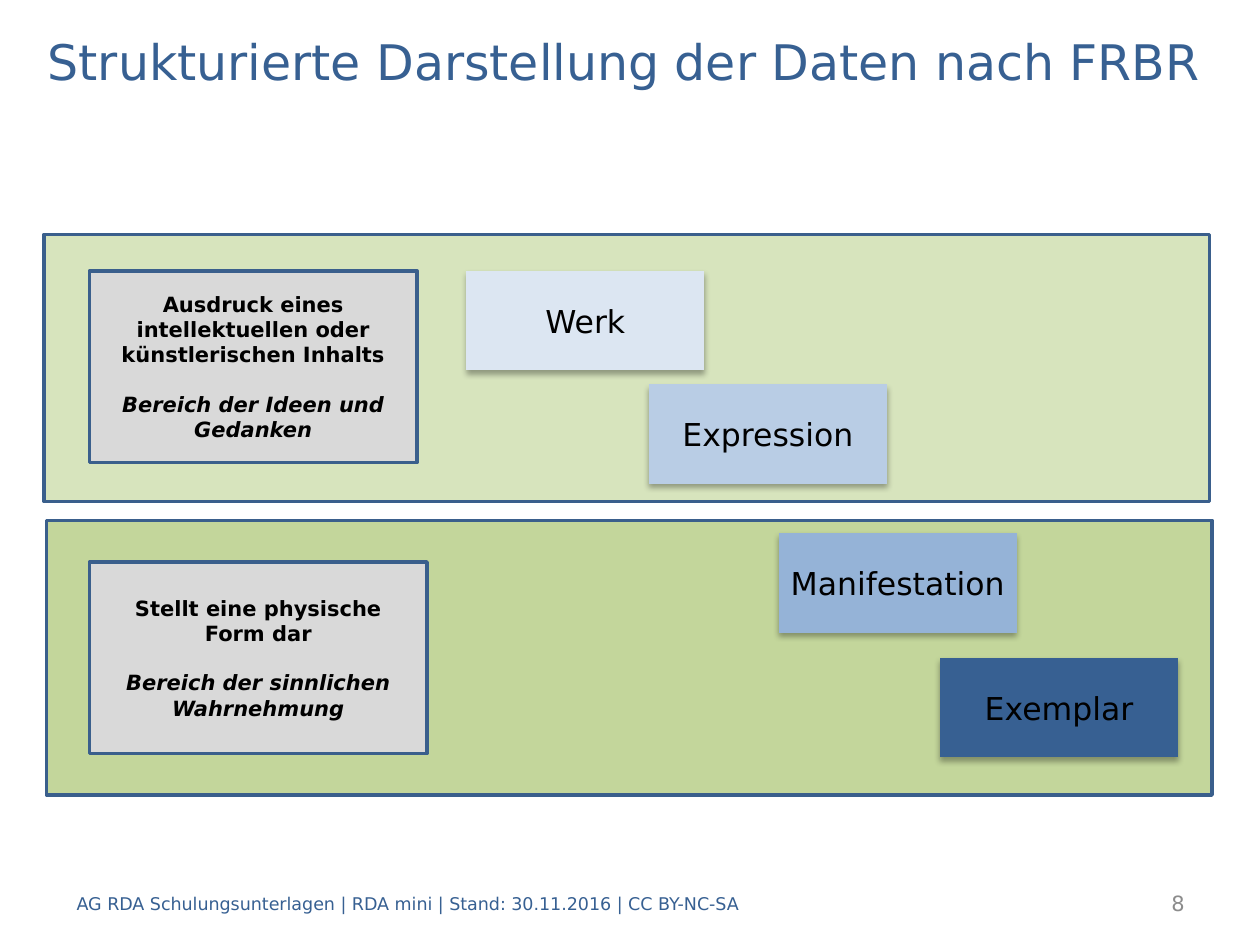
from dataclasses import dataclass

from lxml import etree
from pptx import Presentation
from pptx import util as u
from pptx.dml.color import RGBColor
from pptx.enum import shapes, text
from pptx.oxml.ns import qn


@dataclass(frozen=True)
class Theme:
    font: str = "DejaVu Sans"
    blue: str = "376092"
    border: str = "3A5F8C"
    grey: str = "D9D9D9"
    number: str = "8C8C8C"
    ink: str = "000000"
    idea_band: str = "D7E4BD"
    physical_band: str = "C3D69B"
    levels: tuple = ("DCE6F2", "B9CDE5", "95B3D7", "376092")
    title: int = 28
    level: int = 18
    body: int = 12
    footer: int = 10


T = Theme()
MSO = shapes.MSO_SHAPE
ALIGN = text.PP_ALIGN


def add_box(s, kind, at, fill, border=None):
    sp = s.shapes.add_shape(kind, *(u.Inches(v) for v in at))
    sp.shadow.inherit = False
    sp.fill.solid()
    sp.fill.fore_color.rgb = RGBColor.from_string(fill)
    if border:
        sp.line.color.rgb = RGBColor.from_string(border)
        sp.line.width = u.Pt(2)
    else:
        sp.line.fill.background()
    return sp


def write(p, words, size, color, align, bold=False, italic=False):
    p.alignment = align
    r = p.add_run()
    r.text = words
    r.font.name = T.font
    r.font.size = u.Pt(size)
    r.font.color.rgb = RGBColor.from_string(color)
    r.font.bold = bold
    r.font.italic = italic


prs = Presentation()
prs.slide_width, prs.slide_height = u.Inches(10), u.Inches(7.5)
s = prs.slides.add_slide(prs.slide_layouts[6])

add_box(s, MSO.RECTANGLE, (0.37, 4.13, 9.25, 2.18), T.physical_band, T.border)
add_box(s, MSO.RECTANGLE, (0.35, 1.86, 9.25, 2.12), T.idea_band, T.border)

notes = [
    (2.15, 2.6, "Ausdruck eines intellektuellen oder künstlerischen Inhalts",
     "Bereich der Ideen und Gedanken"),
    (4.46, 2.68, "Stellt eine physische Form dar",
     "Bereich der sinnlichen Wahrnehmung"),
]
for top, width, meaning, realm in notes:
    sp = add_box(s, MSO.RECTANGLE, (0.71, top, width, 1.52), T.grey, T.border)
    tf = sp.text_frame
    tf.word_wrap = True
    tf.vertical_anchor = text.MSO_ANCHOR.MIDDLE
    write(tf.paragraphs[0], meaning, T.body, T.ink, ALIGN.CENTER, bold=True)
    p = tf.add_paragraph()
    p.space_before = u.Pt(14)
    write(p, realm, T.body, T.ink, ALIGN.CENTER, bold=True, italic=True)

levels = [
    ("Werk", 3.7, 2.15),
    ("Expression", 5.15, 3.05),
    ("Manifestation", 6.18, 4.23),
    ("Exemplar", 7.46, 5.22),
]
for (name, left, top), fill in zip(levels, T.levels):
    sp = add_box(s, MSO.FLOWCHART_PROCESS, (left, top, 1.89, 0.79), fill)
    effects = sp._element.spPr.find(qn("a:effectLst"))
    shadow = etree.SubElement(effects, qn("a:outerShdw"), blurRad=str(u.Pt(3.5)),
                              dist=str(u.Pt(2.2)), dir="5400000", rotWithShape="0")
    color = etree.SubElement(shadow, qn("a:srgbClr"), val=T.ink)
    etree.SubElement(color, qn("a:alpha"), val="32000")
    tf = sp.text_frame
    tf.word_wrap = False
    tf.vertical_anchor = text.MSO_ANCHOR.MIDDLE
    write(tf.paragraphs[0], name, T.level, T.ink, ALIGN.CENTER)

labels = [
    ((0.28, 0.2, 9.45, 0.56), "Strukturierte Darstellung der Daten nach FRBR",
     T.title, T.blue, ALIGN.LEFT),
    ((7.91, 6.97, 1.59, 0.4), "8", T.body, T.number, ALIGN.RIGHT),
    ((0.51, 6.97, 8.5, 0.4),
     "AG RDA Schulungsunterlagen | RDA mini | Stand: 30.11.2016 | CC BY-NC-SA",
     T.footer, T.blue, ALIGN.LEFT),
]
for at, words, size, color, align in labels:
    tf = s.shapes.add_textbox(*(u.Inches(v) for v in at)).text_frame
    tf.word_wrap = True
    tf.vertical_anchor = text.MSO_ANCHOR.MIDDLE
    write(tf.paragraphs[0], words, size, color, align)

prs.save("out.pptx")
